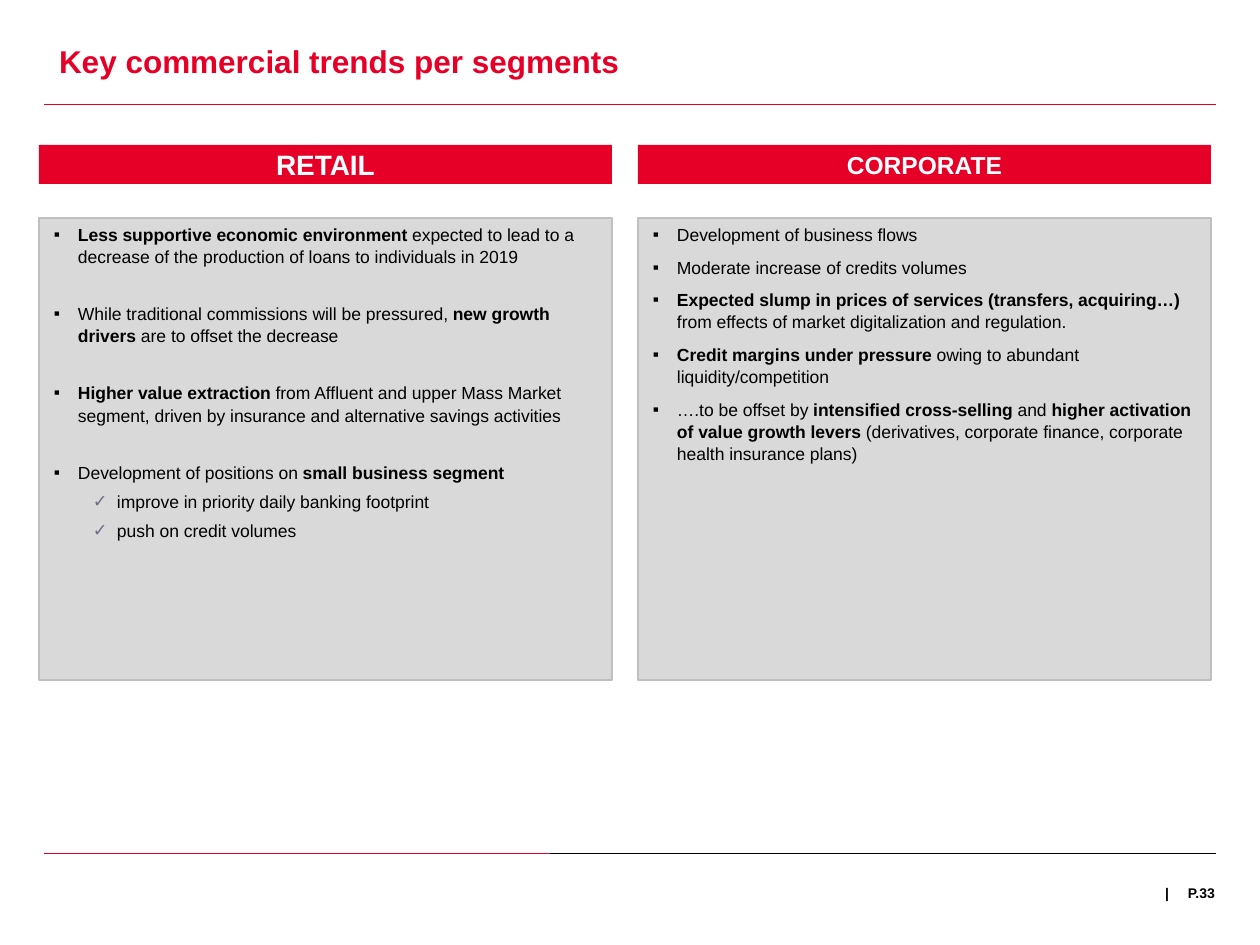
import pptx
import pptx.dml.color
import pptx.enum.shapes
import pptx.enum.text
import pptx.oxml.ns
import pptx.util
import lxml.etree

PX = 914400 / 126
COLORS = {
    "red": "E60028", "black": "000000", "white": "FFFFFF",
    "panel": "D9D9D9", "border": "BFBFBF", "check": "6E6E87",
}
COLUMN_WIDTH = 573
PANEL_PADDING = (15, 5, 15, 5)
NO_PADDING = (0, 0, 0, 0)

MAIN, SUB = 0, 1
MARKERS = {MAIN: ("▪", 24, "black"), SUB: ("✓", 63, "check")}
segments = [
    {"name": "RETAIL", "name_size": 16, "left": 39, "points": [
        (MAIN, 0, "*Less supportive economic environment *expected to lead to a decrease "
                  "of the production of loans to individuals in 2019"),
        (MAIN, 20, "While traditional commissions will be pressured, *new growth drivers *"
                   "are to offset the decrease"),
        (MAIN, 20, "*Higher value extraction *from Affluent and upper Mass Market segment, "
                   "driven by insurance and alternative savings activities"),
        (MAIN, 20, "Development of positions on *small business segment*"),
        (SUB, 4, "improve in priority daily banking footprint"),
        (SUB, 4, "push on credit volumes"),
    ]},
    {"name": "CORPORATE", "name_size": 14, "left": 638, "points": [
        (MAIN, 0, "Development of business flows"),
        (MAIN, 6, "Moderate increase of credits volumes"),
        (MAIN, 6, "*Expected slump in prices of services (transfers, acquiring…) *"
                  "from effects of market digitalization and regulation."),
        (MAIN, 6, "*Credit margins under pressure *owing to abundant liquidity/competition"),
        (MAIN, 6, "….to be offset by *intensified cross-selling *and *higher activation of "
                  "value growth levers *(derivatives, corporate finance, corporate health "
                  "insurance plans)"),
    ]},
]


def px(*lengths):
    return [round(length * PX) for length in lengths]


def setup_text(shape, box, padding, anchor):
    shape.left, shape.top, shape.width, shape.height = px(*box)
    frame = shape.text_frame
    frame.auto_size = pptx.enum.text.MSO_AUTO_SIZE.NONE
    frame.word_wrap = True
    frame.vertical_anchor = anchor
    (frame.margin_left, frame.margin_top,
     frame.margin_right, frame.margin_bottom) = px(*padding)
    return frame


rgb = {name: pptx.dml.color.RGBColor.from_string(value) for name, value in COLORS.items()}
TOP = pptx.enum.text.MSO_ANCHOR.TOP
MIDDLE = pptx.enum.text.MSO_ANCHOR.MIDDLE
ALIGN = pptx.enum.text.PP_ALIGN
qn = pptx.oxml.ns.qn

deck = pptx.Presentation()
deck.slide_width, deck.slide_height = px(1260, 945)
slide = deck.slides.add_slide(deck.slide_layouts[3])
title, *panels = slide.placeholders
labels = []

for left, right, y, color in [(44, 1216, 104, "red"), (44, 550, 853, "red"),
                              (550, 1216, 853, "black")]:
    rule = slide.shapes.add_connector(
        pptx.enum.shapes.MSO_CONNECTOR.STRAIGHT, *px(left, y, right, y))
    rule.line.color.rgb = rgb[color]
    rule.line.width = pptx.util.Pt(0.5)
    lxml.etree.SubElement(rule._element.spPr, qn("a:effectLst"))

heading = setup_text(title, (54, 42, 1162, 77), (5, 0, 5, 0), TOP)
labels.append((heading, "Key commercial trends per segments", 18, "red", ALIGN.LEFT))

for segment, panel in zip(segments, panels):
    banner = slide.shapes.add_shape(
        pptx.enum.shapes.MSO_SHAPE.RECTANGLE, *px(segment["left"], 145, COLUMN_WIDTH, 39))
    banner.shadow.inherit = False
    banner.fill.solid()
    banner.fill.fore_color.rgb = rgb["red"]
    banner.line.fill.background()
    banner_text = setup_text(
        banner, (segment["left"], 145, COLUMN_WIDTH, 39), NO_PADDING, MIDDLE)
    labels.append((banner_text, segment["name"], segment["name_size"], "white", ALIGN.CENTER))

    panel.fill.solid()
    panel.fill.fore_color.rgb = rgb["panel"]
    panel.line.color.rgb = rgb["border"]
    panel.line.width = pptx.util.Pt(0.75)
    points = setup_text(panel, (segment["left"], 218, COLUMN_WIDTH, 462), PANEL_PADDING, TOP)
    for number, (level, gap, wording) in enumerate(segment["points"]):
        point = points.add_paragraph() if number else points.paragraphs[0]
        marker, indent, marker_color = MARKERS[level]
        point.level = level
        properties = point._p.get_or_add_pPr()
        properties.set("marL", str(px(indent)[0]))
        properties.set("indent", str(px(-24)[0]))
        bullet_color = lxml.etree.SubElement(properties, qn("a:buClr"))
        lxml.etree.SubElement(bullet_color, qn("a:srgbClr"), val=COLORS[marker_color])
        lxml.etree.SubElement(properties, qn("a:buFont"), typeface="Arial")
        lxml.etree.SubElement(properties, qn("a:buChar"), char=marker)
        point.space_before = pptx.util.Pt(gap)
        point.line_spacing = 1.05
        for part, phrase in enumerate(wording.split("*")):
            if phrase:
                run = point.add_run()
                run.text = phrase
                run.font.name = "Arial"
                run.font.size = pptx.util.Pt(10)
                run.font.bold = part % 2 == 1
                run.font.color.rgb = rgb["black"]

for wording, box, align in [("|", (1162, 885, 10, 60), ALIGN.CENTER),
                            ("P.33", (1166, 885, 49, 60), ALIGN.RIGHT)]:
    footer = slide.shapes.add_textbox(*px(*box))
    labels.append((setup_text(footer, box, NO_PADDING, TOP), wording, 8, "black", align))

for frame, wording, size, color, align in labels:
    frame.text = wording
    line = frame.paragraphs[0]
    line.alignment = align
    font = line.runs[0].font
    font.name = "Arial"
    font.size = pptx.util.Pt(size)
    font.bold = True
    font.color.rgb = rgb[color]

deck.save("out.pptx")
